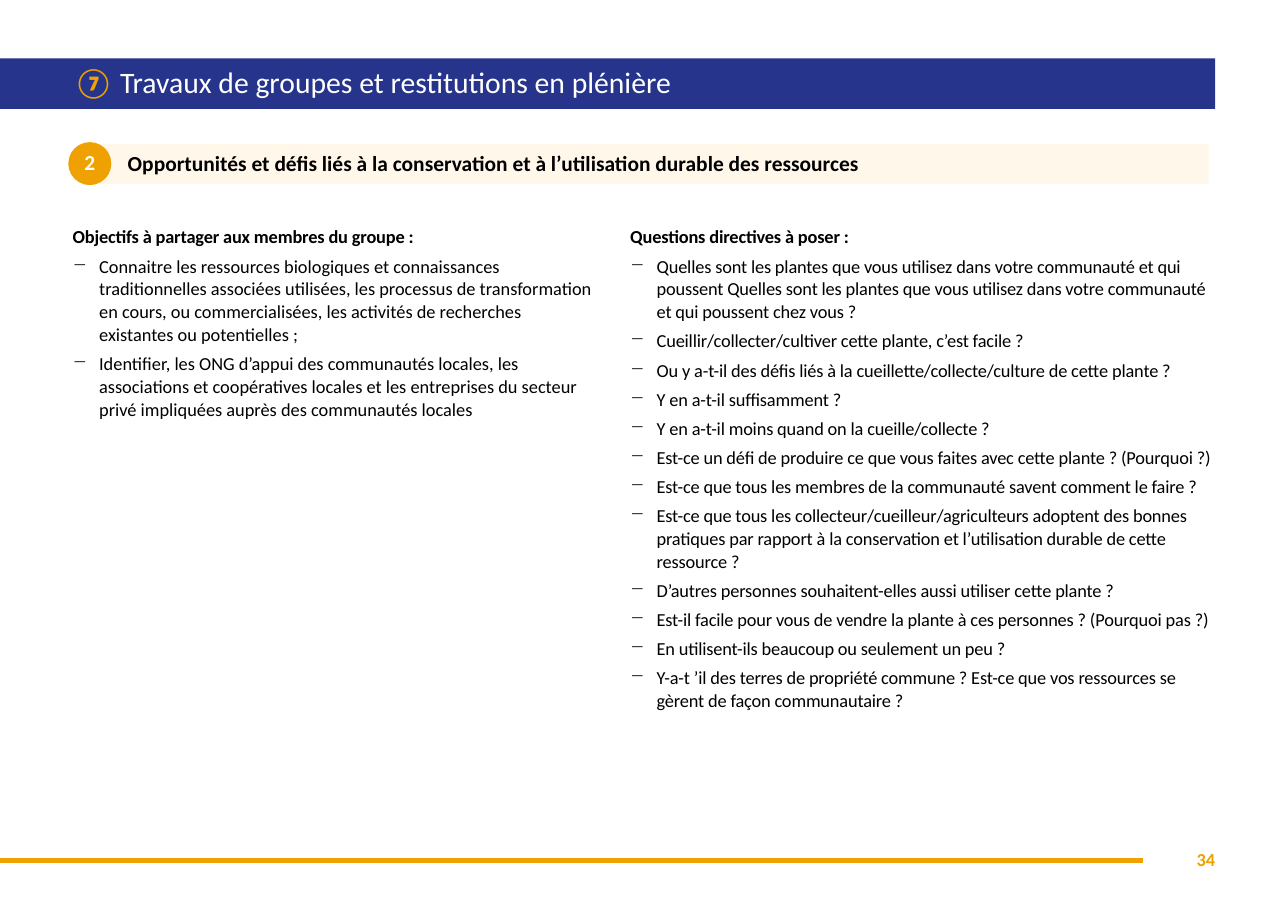
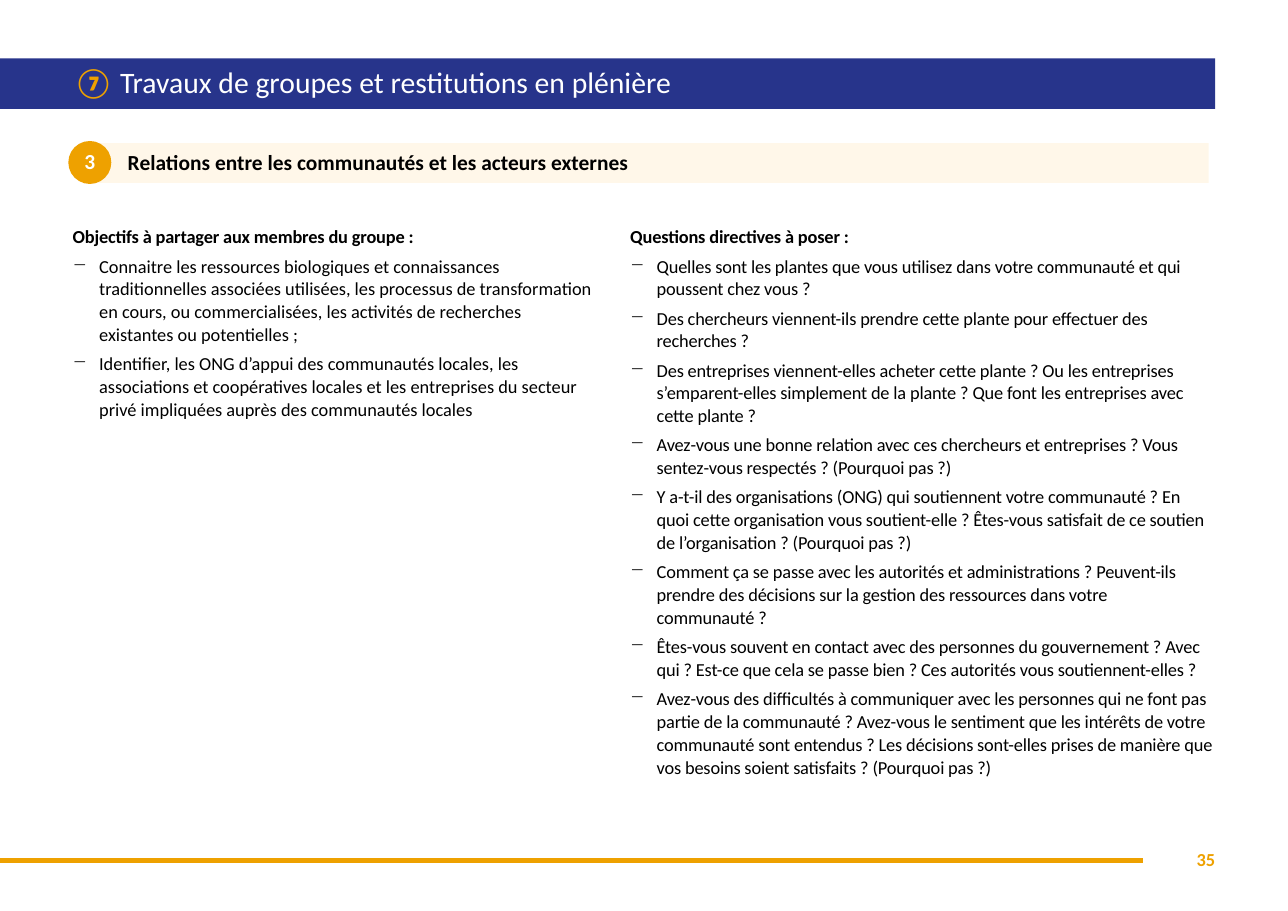
"""Two workshop slides: group themes with goals and guiding questions."""
import pptx
import pptx.dml.color
import pptx.enum.shapes
import pptx.enum.text
import pptx.util
from lxml import etree
from pptx.oxml.ns import qn

SCALE = 9144
HUES = {"blue": "27348B", "gold": "EEA100", "cream": "FFEDC9",
        "white": "FFFFFF", "black": "000000"}
FONT = "Calibri"
SHAPE = pptx.enum.shapes.MSO_SHAPE
ALIGN = pptx.enum.text.PP_ALIGN
MIDDLE = pptx.enum.text.MSO_ANCHOR.MIDDLE

MARK = "⑦"
TITLE = " Travaux de groupes et restitutions en plénière"
GOALS = (
    "Objectifs à partager aux membres du groupe :",
    "Connaitre les ressources biologiques et connaissances traditionnelles associées utilisées, les processus de transformation en cours, ou commercialisées, les activités de recherches existantes ou potentielles ;",
    "Identifier, les ONG d’appui des communautés locales, les associations et coopératives locales et les entreprises du secteur privé impliquées auprès des communautés locales",
)
ASK = "Questions directives à poser :"
PAGES = [
    {
        "page": "34", "num": "2", "top": 131,
        "theme": "Opportunités et défis liés à la conservation et à l’utilisation durable des ressources",
        "asks": [
            "Quelles sont les plantes que vous utilisez dans votre communauté et qui poussent Quelles sont les plantes que vous utilisez dans votre communauté et qui poussent chez vous ?",
            "Cueillir/collecter/cultiver cette plante, c’est facile ?",
            "Ou y a-t-il des défis liés à la cueillette/collecte/culture de cette plante ?",
            "Y en a-t-il suffisamment ?",
            "Y en a-t-il moins quand on la cueille/collecte ?",
            "Est-ce un défi de produire ce que vous faites avec cette plante ? (Pourquoi ?)",
            "Est-ce que tous les membres de la communauté savent comment le faire ?",
            "Est-ce que tous les collecteur/cueilleur/agriculteurs adoptent des bonnes pratiques par rapport à la conservation et l’utilisation durable de cette ressource ?",
            "D’autres personnes souhaitent-elles aussi utiliser cette plante ?",
            "Est-il facile pour vous de vendre la plante à ces personnes ? (Pourquoi pas ?)",
            "En utilisent-ils beaucoup ou seulement un peu ?",
            "Y-a-t ’il des terres de propriété commune ? Est-ce que vos ressources se gèrent de façon communautaire ?",
        ],
    },
    {
        "page": "35", "num": "3", "top": 130,
        "theme": "Relations entre les communautés et les acteurs externes",
        "asks": [
            "Quelles sont les plantes que vous utilisez dans votre communauté et qui poussent chez vous ?",
            "Des chercheurs viennent-ils prendre cette plante pour effectuer des recherches ?",
            "Des entreprises viennent-elles acheter cette plante ? Ou les entreprises s’emparent-elles simplement de la plante ? Que font les entreprises avec cette plante ?",
            "Avez-vous une bonne relation avec ces chercheurs et entreprises ? Vous sentez-vous respectés ? (Pourquoi pas ?)",
            "Y a-t-il des organisations (ONG) qui soutiennent votre communauté ? En quoi cette organisation vous soutient-elle ? Êtes-vous satisfait de ce soutien de l’organisation ? (Pourquoi pas ?)",
            "Comment ça se passe avec les autorités et administrations ? Peuvent-ils prendre des décisions sur la gestion des ressources dans votre communauté ?",
            "Êtes-vous souvent en contact avec des personnes du gouvernement ? Avec qui ? Est-ce que cela se passe bien ? Ces autorités vous soutiennent-elles ?",
            "Avez-vous des difficultés à communiquer avec les personnes qui ne font pas partie de la communauté ? Avez-vous le sentiment que les intérêts de votre communauté sont entendus ? Les décisions sont-elles prises de manière que vos besoins soient satisfaits ? (Pourquoi pas ?)",
        ],
    },
]

Pt = pptx.util.Pt
HEAD = {"line_spacing": 0.9, "alignment": ALIGN.LEFT}
THEME = {"line_spacing": Pt(18), "alignment": ALIGN.LEFT}
BADGE = {"line_spacing": Pt(18), "space_after": Pt(6), "alignment": ALIGN.CENTER}
BODY = {"line_spacing": Pt(15), "space_after": Pt(4)}
FOOT = {"alignment": ALIGN.RIGHT}


def px(num):
    return pptx.util.Emu(num * SCALE)


def tint(hue):
    return pptx.dml.color.RGBColor.from_string(HUES[hue])


def apply(item, form):
    for key, val in form.items():
        setattr(item, key, val)


def write(para, text, size, hue, bold=False, gap=0):
    run = para.add_run()
    run.text = text
    apply(run.font, {"name": FONT, "size": Pt(size), "bold": bold})
    run.font.color.rgb = tint(hue)
    if gap:
        run.font._element.set("spc", str(gap))


def frame(shape, pads=(0, 0, 0, 0)):
    text = shape.text_frame
    text.word_wrap = True
    sides = ("left", "top", "right", "bottom")
    apply(text, {f"margin_{side}": px(pad) for side, pad in zip(sides, pads)})
    return text


def block(slide, kind, box, hue, pads, form, alpha=None):
    shape = slide.shapes.add_shape(kind, *map(px, box))
    shape.shadow.inherit = False
    shape.fill.solid()
    shape.fill.fore_color.rgb = tint(hue)
    shape.line.fill.background()
    if alpha:
        color = shape._element.spPr.find(qn("a:solidFill"))[0]
        etree.SubElement(color, qn("a:alpha")).set("val", str(alpha * 1000))
    text = frame(shape, pads)
    text.vertical_anchor = MIDDLE
    para = text.paragraphs[0]
    apply(para, form)
    return para


def dash(para):
    props = para._p.get_or_add_pPr()
    for key, val in (("marL", 24), ("indent", -24)):
        props.set(key, str(px(val)))
    etree.SubElement(props, qn("a:buChar")).set("char", "−")


def column(slide, box, lines, gap):
    text = frame(slide.shapes.add_textbox(*map(px, box)))
    for pos, line in enumerate(lines):
        para = text.add_paragraph() if pos else text.paragraphs[0]
        if pos:
            dash(para)
        apply(para, BODY)
        write(para, line, 12, "black", not pos, gap if pos else -10)


def base(slide, page):
    note = frame(slide.shapes.add_textbox(*map(px, (1029, 770, 74, 20))))
    para = note.paragraphs[0]
    apply(para, FOOT)
    write(para, page, 12, "gold", True)
    rule = slide.shapes.add_connector(
        pptx.enum.shapes.MSO_CONNECTOR.STRAIGHT, *map(px, (0, 781, 1037, 781)))
    rule.line.color.rgb = tint("gold")
    rule.line.width = Pt(3)
    etree.SubElement(rule._element.spPr, qn("a:effectLst"))
    para = block(slide, SHAPE.RECTANGLE, (0, 53, 1103, 46), "blue",
                 (67, 4, 39, 4), HEAD)
    write(para, MARK, 19.4, "gold", True, -10)
    write(para, TITLE, 19.4, "white")


def build(deck, data):
    slide = deck.slides.add_slide(deck.slide_layouts[6])
    base(slide, data["page"])
    top = data["top"]
    para = block(slide, SHAPE.RECTANGLE, (81, top, 1016, 36), "cream",
                 (35, 4, 16, 8), THEME, 40)
    write(para, data["theme"], 14, "black", True)
    para = block(slide, SHAPE.OVAL, (62, top - 2, 39, 39), "gold",
                 (0, 4, 0, 8), BADGE)
    write(para, data["num"], 14, "white", True, -50)
    column(slide, (66, 204, 472, 523), GOALS, 0)
    column(slide, (572, 204, 531, 507), [ASK, *data["asks"]], -10)


def main():
    deck = pptx.Presentation()
    apply(deck, {"slide_width": px(1169), "slide_height": px(827)})
    for data in PAGES:
        build(deck, data)
    deck.save("out.pptx")


if __name__ == "__main__":
    main()
